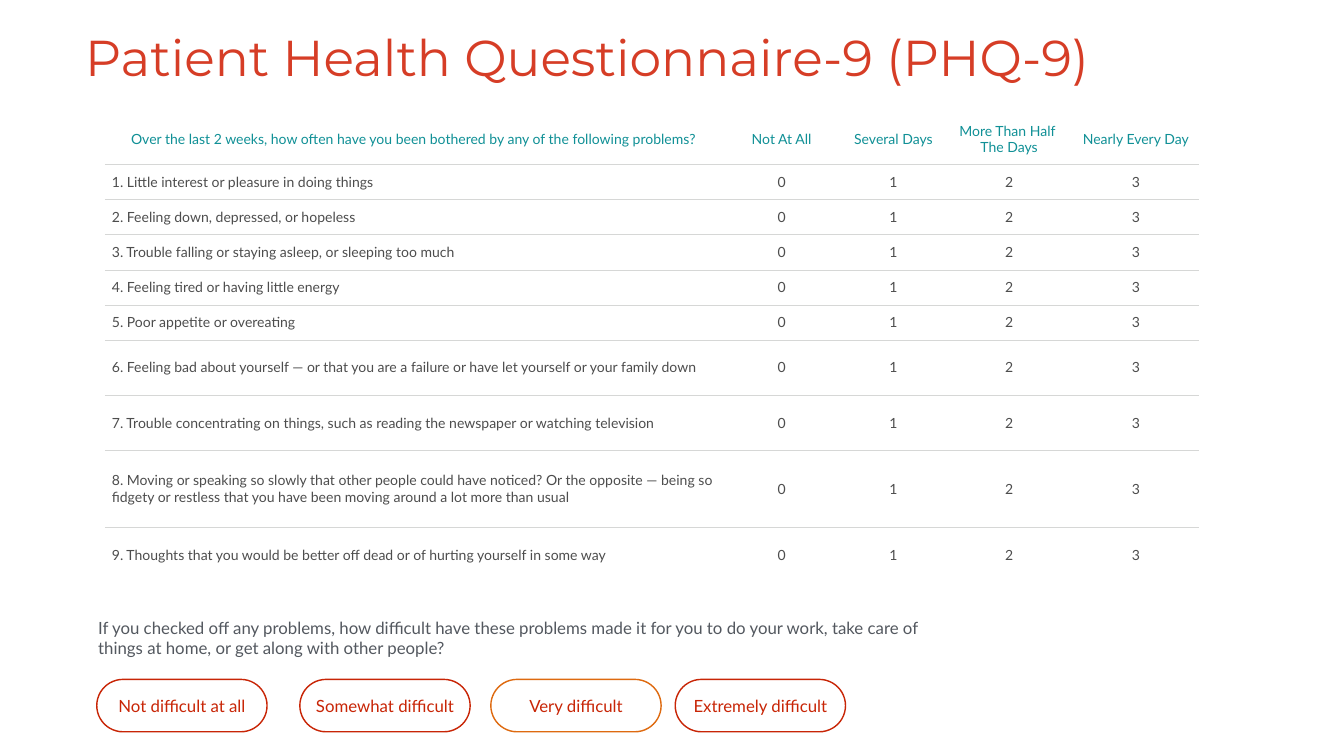
from dataclasses import dataclass
from typing import NamedTuple

from lxml.etree import SubElement
from pptx import Presentation
from pptx.dml.color import RGBColor
from pptx.enum.shapes import MSO_SHAPE as Preset
from pptx.enum.text import MSO_ANCHOR as Anchor, PP_ALIGN as Align
from pptx.oxml.ns import qn
from pptx.util import Inches, Pt


@dataclass(frozen=True)
class Theme:
    heading_font: str = "Montserrat"
    body_font: str = "Lato"
    title: str = "D63D26"
    header: str = "109096"
    body: str = "4D4D4D"
    note: str = "53585F"
    answer: str = "C82506"
    highlight: str = "DE6A10"
    rule: str = "D6D7D6"
    title_size: int = 72
    note_size: int = 24
    table_size: int = 20


class Area(NamedTuple):
    left: float
    top: float
    width: float
    height: float


class Style(NamedTuple):
    font: str
    size: int
    color: str
    align: Align = Align.LEFT
    spacing: float = 1.0


class Question(NamedTuple):
    text: str
    height: float


class Answer(NamedTuple):
    label: str
    left: float
    outline: str


THEME = Theme()
PAGE_WIDTH, PAGE_HEIGHT = 26.67, 15
TITLE = Style(THEME.heading_font, THEME.title_size, THEME.title, spacing=0.7)
HEADER = Style(THEME.body_font, THEME.table_size, THEME.header, Align.CENTER)
QUESTION = Style(THEME.body_font, THEME.table_size, THEME.body)
SCORE = QUESTION._replace(align=Align.CENTER)
NOTE = Style(THEME.body_font, THEME.note_size, THEME.note)
ANSWER = Style(THEME.body_font, THEME.note_size, THEME.answer, Align.CENTER)

NO_TABLE_STYLE = "{2D5ABB26-0587-4C30-8999-92F81FD0307C}"
COLUMN_SHARES = (45.93, 8.85, 7.8, 9.41, 9.45)
HEADER_HEIGHT, SHORT, TALL, TALLEST = 6.8, 4.63, 7.33, 10.13
HEADERS = (
    "Over the last 2 weeks, how often have you been bothered by any of the following problems?",
    "Not At All",
    "Several Days",
    "More Than Half \vThe Days",
    "Nearly Every Day",
)
QUESTIONS = (
    Question("Little interest or pleasure in doing things", SHORT),
    Question("Feeling down, depressed, or hopeless", SHORT),
    Question("Trouble falling or staying asleep, or sleeping too much", SHORT),
    Question("Feeling tired or having little energy", SHORT),
    Question("Poor appetite or overeating", SHORT),
    Question("Feeling bad about yourself — or that you are a failure or have let yourself or your family down", TALL),
    Question("Trouble concentrating on things, such as reading the newspaper or watching television", TALL),
    Question(
        "Moving or speaking so slowly that other people could have noticed? Or the opposite — being so "
        "fidgety or restless that you have been moving around a lot more than usual",
        TALLEST,
    ),
    Question("Thoughts that you would be better off dead or of hurting yourself in some way", TALL),
)
ANSWERS = (
    Answer("Not difficult at all", 7.2, THEME.answer),
    Answer("Somewhat difficult", 22.31, THEME.answer),
    Answer("Very difficult", 36.52, THEME.highlight),
    Answer("Extremely difficult", 50.24, THEME.answer),
)


def across(share: float) -> int:
    return Inches(PAGE_WIDTH * share / 100)


def down(share: float) -> int:
    return Inches(PAGE_HEIGHT * share / 100)


def place(area: Area) -> tuple[int, int, int, int]:
    return across(area.left), down(area.top), across(area.width), down(area.height)


def set_margins(box, inset: float) -> None:
    box.margin_left = box.margin_right = Inches(inset)
    box.margin_top = box.margin_bottom = Inches(inset)
    box.vertical_anchor = Anchor.MIDDLE


def write(frame, text: str, style: Style) -> None:
    frame.word_wrap = True
    para = frame.paragraphs[0]
    para.text = text
    para.alignment = style.align
    para.line_spacing = style.spacing
    para.font.name = style.font
    para.font.size = Pt(style.size)
    para.font.color.rgb = RGBColor.from_string(style.color)


def add_text(page, area: Area, text: str, style: Style, inset: float) -> None:
    frame = page.shapes.add_textbox(*place(area)).text_frame
    set_margins(frame, inset)
    write(frame, text, style)


def rule_below(cell) -> None:
    properties = cell._tc.get_or_add_tcPr()
    line = SubElement(properties, qn("a:lnB"), w=str(Pt(1)))
    fill = SubElement(line, qn("a:solidFill"))
    SubElement(fill, qn("a:srgbClr"), val=THEME.rule)
    properties.insert(0, line)


def add_questionnaire(page, left: float, top: float) -> None:
    heights = (HEADER_HEIGHT, *(question.height for question in QUESTIONS))
    area = Area(left, top, sum(COLUMN_SHARES), sum(heights))
    holder = page.shapes.add_table(len(heights), len(COLUMN_SHARES), *place(area))
    table = holder.table
    table.first_row = table.horz_banding = False
    next(holder.element.iter(qn("a:tableStyleId"))).text = NO_TABLE_STYLE
    for column, share in zip(table.columns, COLUMN_SHARES):
        column.width = across(share)
    for row, share in zip(table.rows, heights):
        row.height = down(share)

    scores = [str(score) for score in range(len(COLUMN_SHARES) - 1)]
    rows = [HEADERS]
    rows += [(f"{number}. {question.text}", *scores) for number, question in enumerate(QUESTIONS, 1)]
    for row_index, texts in enumerate(rows):
        for column_index, text in enumerate(texts):
            cell = table.cell(row_index, column_index)
            style = HEADER if row_index == 0 else SCORE if column_index else QUESTION
            set_margins(cell, 0.14)
            write(cell.text_frame, text, style)
            cell.fill.background()
            if row_index < len(rows) - 1:
                rule_below(cell)


def add_answer(page, answer: Answer) -> None:
    area = Area(answer.left, 89.87, 12.67, 6.93)
    pill = page.shapes.add_shape(Preset.ROUNDED_RECTANGLE, *place(area))
    pill.adjustments[0] = 0.5
    pill.shadow.inherit = False
    pill.fill.background()
    pill.line.color.rgb = RGBColor.from_string(answer.outline)
    pill.line.width = Pt(2)
    set_margins(pill.text_frame, 0.08)
    write(pill.text_frame, answer.label, ANSWER)


def main() -> None:
    deck = Presentation()
    deck.slide_width, deck.slide_height = across(100), down(100)
    page = deck.slides.add_slide(deck.slide_layouts[6])
    add_text(page, Area(6.26, 4.2, 87.48, 8.4), "Patient Health Questionnaire-9 (PHQ-9)", TITLE, 0.02)
    add_questionnaire(page, 7.8, 15)
    add_text(
        page,
        Area(7.01, 81.13, 61.9, 6.4),
        "If you checked off any problems, how difficult have these problems made it for you "
        "to do your work, take care of things at home, or get along with other people?",
        NOTE,
        0.08,
    )
    for answer in ANSWERS:
        add_answer(page, answer)
    deck.save("out.pptx")


if __name__ == "__main__":
    main()
